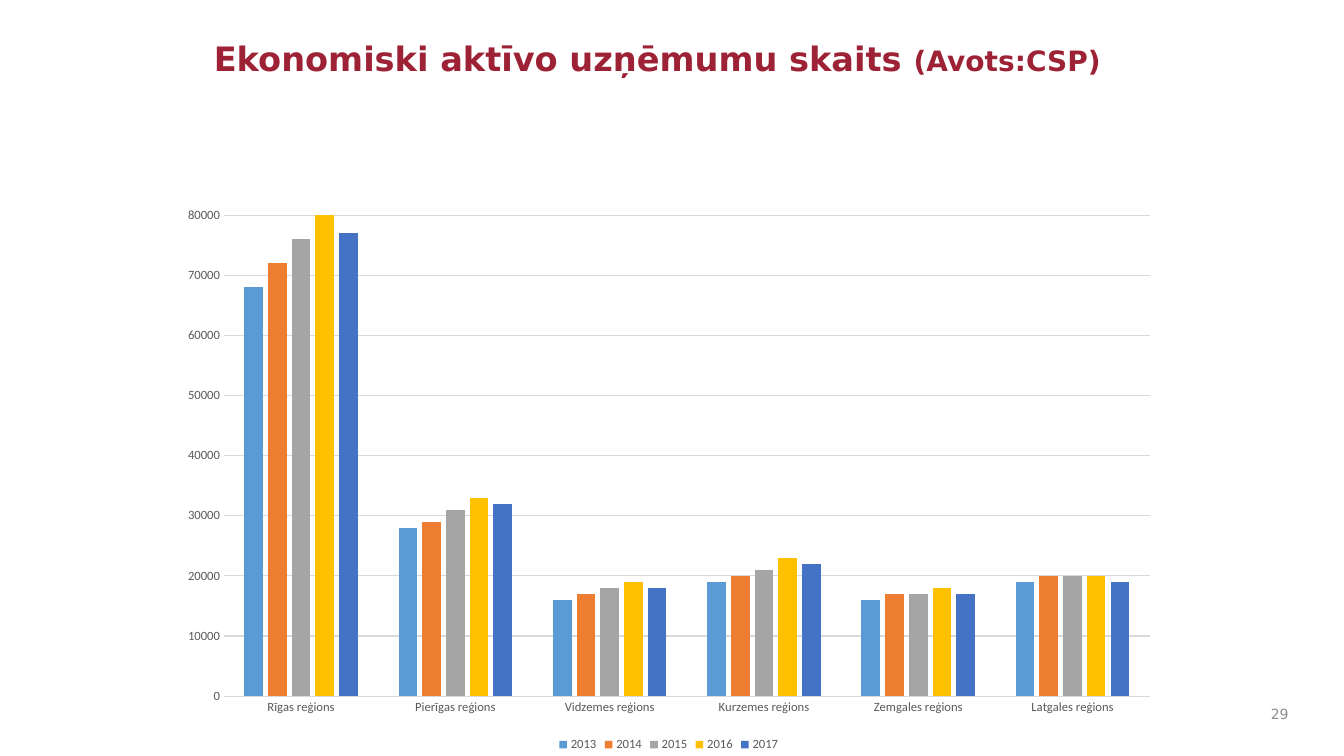
from pptx import Presentation
from pptx.chart.data import CategoryChartData
from pptx.dml.color import RGBColor
from pptx.enum.chart import XL_CHART_TYPE as ChartType
from pptx.enum.chart import XL_LEGEND_POSITION as LegendPosition
from pptx.enum.chart import XL_TICK_MARK as TickMark
from pptx.enum.text import MSO_ANCHOR as Anchor
from pptx.enum.text import MSO_AUTO_SIZE as AutoSize
from pptx.enum.text import PP_ALIGN as Align
from pptx.util import Pt

HEADING_FONT = "DejaVu Sans"
CHART_FONT = "Calibri"
RED, GREY, LABEL, GRID = "9D2235", "8C8C8C", "595959", "D9D9D9"

REGIONS = ["Rīgas reģions", "Pierīgas reģions", "Vidzemes reģions",
           "Kurzemes reģions", "Zemgales reģions", "Latgales reģions"]
COMPANIES = [
    ("2013", "5B9BD5", [68000, 28000, 16000, 19000, 16000, 19000]),
    ("2014", "ED7D31", [72000, 29000, 17000, 20000, 17000, 20000]),
    ("2015", "A5A5A5", [76000, 31000, 18000, 21000, 17000, 20000]),
    ("2016", "FFC000", [80000, 33000, 19000, 23000, 18000, 20000]),
    ("2017", "4472C4", [77000, 32000, 18000, 22000, 17000, 19000]),
]


def color(value):
    return RGBColor.from_string(value)


def set_font(font, name, size, value, bold=False):
    font.name = name
    font.size = Pt(size)
    font.bold = bold
    font.color.rgb = color(value)


def set_line(line, value):
    line.color.rgb = color(value)
    line.width = Pt(0.75)


def add_run(paragraph, text, size, value, bold=False):
    run = paragraph.add_run()
    run.text = text
    set_font(run.font, HEADING_FONT, size, value, bold)


def add_title(slide, runs):
    title = slide.shapes.title
    title.left, title.top = Pt(145.5), Pt(26.5)
    title.width, title.height = Pt(664.5), Pt(90.5)
    title.fill.solid()
    title.fill.fore_color.rgb = color("FFFFFF")
    frame = title.text_frame
    frame.auto_size = AutoSize.NONE
    frame.word_wrap = True
    frame.vertical_anchor = Anchor.TOP
    paragraph = frame.paragraphs[0]
    paragraph.alignment = Align.LEFT
    paragraph.line_spacing = 0.9
    for text, size in runs:
        add_run(paragraph, text, size, RED, True)


def add_page_number(slide, number):
    box = slide.shapes.add_textbox(Pt(895.5), Pt(498), Pt(32), Pt(24))
    frame = box.text_frame
    frame.word_wrap = True
    frame.vertical_anchor = Anchor.MIDDLE
    paragraph = frame.paragraphs[0]
    paragraph.alignment = Align.RIGHT
    add_run(paragraph, number, 10, GREY)


def format_axis(axis):
    axis.major_tick_mark = TickMark.NONE
    axis.minor_tick_mark = TickMark.NONE
    set_font(axis.tick_labels.font, CHART_FONT, 9, LABEL)


def add_company_chart(slide):
    data = CategoryChartData(number_format="0")
    data.categories = REGIONS
    for year, _, values in COMPANIES:
        data.add_series(year, values)
    chart = slide.shapes.add_chart(
        ChartType.COLUMN_CLUSTERED,
        Pt(120), Pt(140.5), Pt(715.5), Pt(399.5), data).chart
    set_font(chart.font, CHART_FONT, 10, "000000")
    chart.has_title = False

    chart.has_legend = True
    chart.legend.position = LegendPosition.BOTTOM
    chart.legend.include_in_layout = False
    set_font(chart.legend.font, CHART_FONT, 9, LABEL)

    format_axis(chart.category_axis)
    set_line(chart.category_axis.format.line, GRID)

    value_axis = chart.value_axis
    format_axis(value_axis)
    value_axis.minimum_scale, value_axis.maximum_scale = 0, 80000
    value_axis.major_unit = 10000
    value_axis.tick_labels.number_format = "0"
    value_axis.tick_labels.number_format_is_linked = False
    value_axis.format.line.fill.background()
    set_line(value_axis.major_gridlines.format.line, GRID)

    plot = chart.plots[0]
    plot.gap_width, plot.overlap = 219, -27
    plot.vary_by_categories = False
    for series, (_, value, _) in zip(plot.series, COMPANIES):
        series.format.fill.solid()
        series.format.fill.fore_color.rgb = color(value)


def main():
    presentation = Presentation()
    presentation.slide_width, presentation.slide_height = Pt(960), Pt(540)
    slide = presentation.slides.add_slide(presentation.slide_layouts[5])
    add_title(slide, [("Ekonomiski aktīvo uzņēmumu skaits ", 24),
                      ("(Avots:CSP)", 20)])
    add_page_number(slide, "29")
    add_company_chart(slide)
    presentation.save("out.pptx")


if __name__ == "__main__":
    main()
